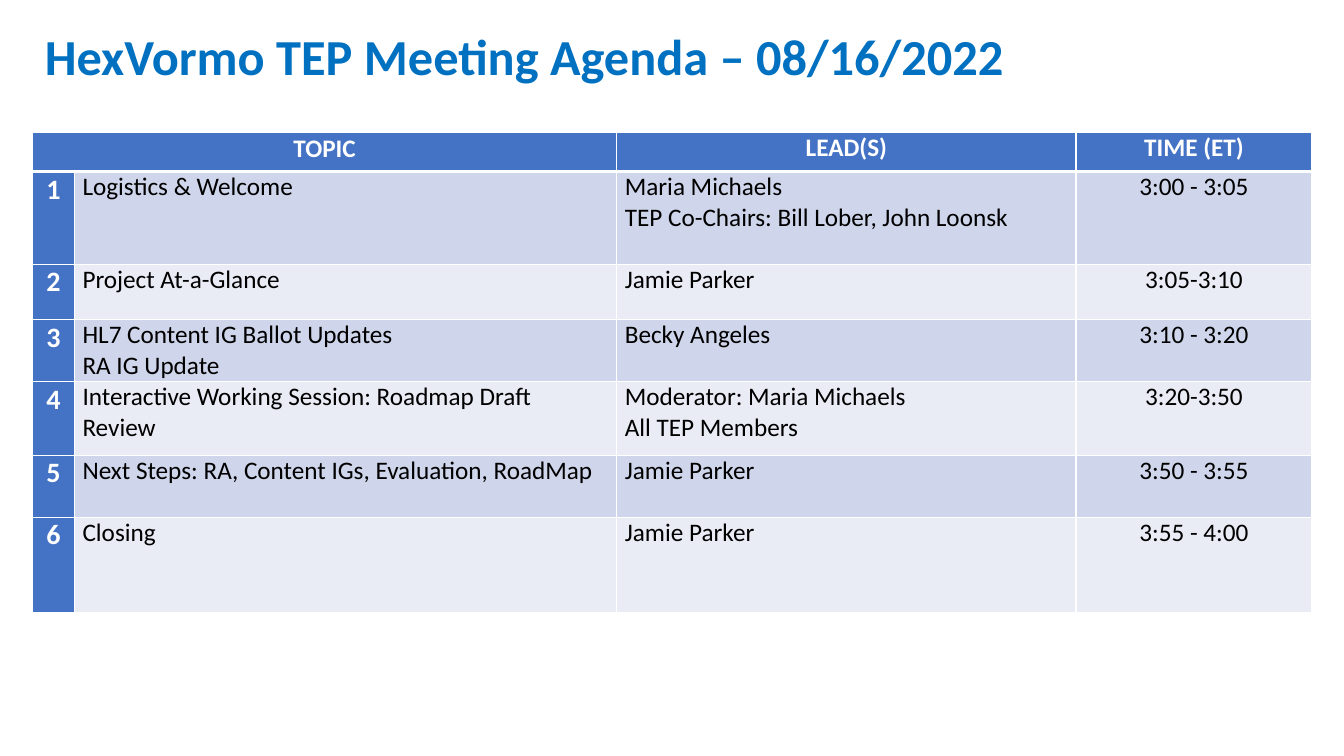
from lxml import etree
from pptx import Presentation
from pptx.dml.color import RGBColor
from pptx.enum import text
from pptx.oxml import ns
from pptx.util import Pt

# Content
TITLE = "HexVormo TEP Meeting Agenda – 08/16/2022"
HEADINGS = ("TOPIC", "", "LEAD(S)", "TIME (ET)")
AGENDA = [
    ("Logistics & Welcome",
     "Maria Michaels\nTEP Co-Chairs: Bill Lober, John Loonsk", "3:00 - 3:05"),
    ("Project At-a-Glance", "Jamie Parker", "3:05-3:10"),
    ("HL7 Content IG Ballot Updates\nRA IG Update", "Becky Angeles", "3:10 - 3:20"),
    ("Interactive Working Session: Roadmap Draft Review",
     "Moderator: Maria Michaels\nAll TEP Members", "3:20-3:50"),
    ("Next Steps: RA, Content IGs, Evaluation, RoadMap", "Jamie Parker", "3:50 - 3:55"),
    ("Closing", "Jamie Parker", "3:55 - 4:00"),
]

# Theme and layout, in points
THEME = {
    "font": "Calibri", "title": "0070C0", "accent": "4472C4", "line": "FFFFFF",
    "bands": ("CFD5EA", "E9EBF5"), "light": "FFFFFF", "dark": "000000",
    "title_size": 36, "number_size": 20, "body_size": 18,
}
SLIDE_SIZE = (960, 540)
TITLE_BOX = (25, 19.4, 859, 57)
TABLE_ORIGIN = (23.2, 94.8)
COLUMN_WIDTHS = (30, 387.4, 328, 168.6)
ROW_HEIGHTS = (27.7, 66.3, 39.5, 44.3, 52.7, 44.3, 68)
THIN, THICK = 1, 3


def style_paragraphs(frame, size, color, bold, align):
    for paragraph in frame.paragraphs:
        paragraph.alignment = align
        font = paragraph.font
        font.name, font.size, font.bold = THEME["font"], Pt(size), bold
        font.color.rgb = RGBColor.from_string(color)


def add_borders(cell, widths):
    properties = cell._tc.get_or_add_tcPr()
    for side, width in zip("LRTB", widths):
        line = etree.SubElement(properties, ns.qn(f"a:ln{side}"), w=str(Pt(width)))
        fill = etree.SubElement(line, ns.qn("a:solidFill"))
        etree.SubElement(fill, ns.qn("a:srgbClr"), val=THEME["line"])


def fill_cell(cell, row, column, words):
    header, number = row == 0, column == 0
    strong = header or number
    add_borders(cell, (THIN, THIN, THICK if row == 1 else THIN, THICK if header else THIN))
    cell.fill.solid()
    cell.fill.fore_color.rgb = RGBColor.from_string(
        THEME["accent"] if strong else THEME["bands"][(row - 1) % 2])
    cell.margin_left = cell.margin_right = Pt(0.7 if number else 5.8)
    cell.margin_top = cell.margin_bottom = Pt(0.7 if number else 0)
    cell.vertical_anchor = text.MSO_ANCHOR.TOP
    cell.text_frame.text = words
    centred = strong or column == len(COLUMN_WIDTHS) - 1
    style_paragraphs(
        cell.text_frame,
        THEME["number_size"] if number and not header else THEME["body_size"],
        THEME["light"] if strong else THEME["dark"], strong,
        text.PP_ALIGN.CENTER if centred else text.PP_ALIGN.LEFT)


def main():
    presentation = Presentation()
    presentation.slide_width, presentation.slide_height = map(Pt, SLIDE_SIZE)
    slide = presentation.slides.add_slide(presentation.slide_layouts[6])

    # Agenda table
    rows = [HEADINGS] + [(str(i), *item) for i, item in enumerate(AGENDA, 1)]
    table = slide.shapes.add_table(
        len(rows), len(COLUMN_WIDTHS), *map(Pt, TABLE_ORIGIN),
        Pt(sum(COLUMN_WIDTHS)), Pt(sum(ROW_HEIGHTS))).table
    for column, width in zip(table.columns, COLUMN_WIDTHS):
        column.width = Pt(width)
    for table_row, height in zip(table.rows, ROW_HEIGHTS):
        table_row.height = Pt(height)
    for r, row in enumerate(rows):
        for c, words in enumerate(row):
            fill_cell(table.cell(r, c), r, c, words)
    table.cell(0, 0).merge(table.cell(0, 1))

    # Title
    frame = slide.shapes.add_textbox(*map(Pt, TITLE_BOX)).text_frame
    frame.word_wrap = True
    frame.text = TITLE
    frame.paragraphs[0].line_spacing = 0.9
    style_paragraphs(frame, THEME["title_size"], THEME["title"], True, text.PP_ALIGN.LEFT)

    presentation.save("out.pptx")


if __name__ == "__main__":
    main()
